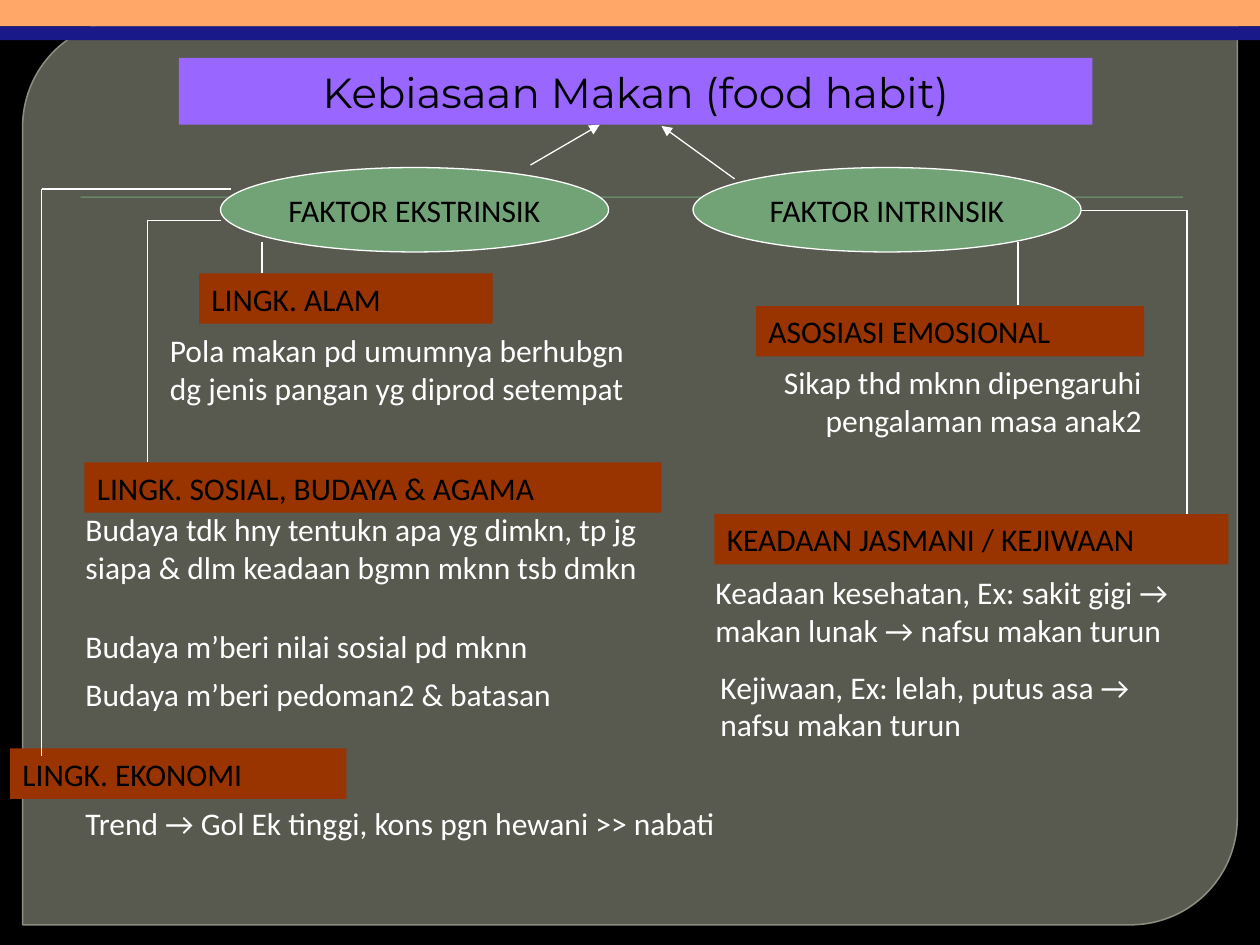
from lxml.etree import SubElement
from pptx import Presentation
from pptx.dml.color import RGBColor
from pptx.enum.shapes import MSO_CONNECTOR, MSO_SHAPE
from pptx.enum.text import MSO_ANCHOR, PP_ALIGN
from pptx.oxml.ns import qn
from pptx.util import Inches, Pt


def paint(color_format, color):
    color_format.solid()
    color_format.fore_color.rgb = RGBColor.from_string(color)


def write(shape, text, color="FFFFFF", size=18, font="Calibri",
          align=PP_ALIGN.LEFT, anchor=MSO_ANCHOR.TOP, wrap=True):
    frame = shape.text_frame
    frame.word_wrap = wrap
    frame.vertical_anchor = anchor
    paragraph = frame.paragraphs[0]
    paragraph.alignment = align
    run = paragraph.add_run()
    run.text = text
    run.font.size = Pt(size)
    run.font.name = font
    run.font.color.rgb = RGBColor.from_string(color)


presentation = Presentation()
presentation.slide_width = Inches(10)
presentation.slide_height = Inches(7.5)
slide = presentation.slides.add_slide(presentation.slide_layouts[5])
paint(slide.background.fill, "000000")

panel = slide.shapes.add_shape(MSO_SHAPE.ROUND_2_DIAG_RECTANGLE,
                               Inches(0.18), Inches(0.16), Inches(9.64), Inches(7.18))
panel.shadow.inherit = False
panel.adjustments[0] = 0.118
panel.adjustments[1] = 0
paint(panel.fill, "585A50")
paint(panel.line.fill, "8A8D7F")
panel.line.width = Pt(0.87)

bands = [
    (0.64, 1.56, 8.75, 0.01, "72A376"),
    (0, 0, 10, 0.21, "FFA669"),
    (0, 0.21, 10, 0.11, "191989"),
]
for left, top, width, height, color in bands:
    band = slide.shapes.add_shape(MSO_SHAPE.RECTANGLE, Inches(left), Inches(top),
                                  Inches(width), Inches(height))
    band.shadow.inherit = False
    paint(band.fill, color)
    band.line.fill.background()

title = slide.shapes.title
title.left, title.top = Inches(1.42), Inches(0.46)
title.width, title.height = Inches(7.25), Inches(0.53)
paint(title.fill, "9966FF")
write(title, "Kebiasaan Makan (food habit)", color="000000", size=24,
      font="Montserrat", align=PP_ALIGN.CENTER, anchor=MSO_ANCHOR.MIDDLE)
band.element.addnext(title.element)

for left, text in [(1.75, "FAKTOR EKSTRINSIK"), (5.5, "FAKTOR INTRINSIK")]:
    factor = slide.shapes.add_shape(MSO_SHAPE.OVAL, Inches(left), Inches(1.33),
                                    Inches(3.08), Inches(0.67))
    factor.shadow.inherit = False
    paint(factor.fill, "72A376")
    paint(factor.line.fill, "FFFFFF")
    factor.line.width = Pt(0.75)
    write(factor, text, color="000000", align=PP_ALIGN.CENTER,
          anchor=MSO_ANCHOR.MIDDLE, wrap=False)

headings = [
    (0.08, 5.94, 2.67, "LINGK. EKONOMI"),
    (0.67, 3.67, 4.58, "LINGK. SOSIAL, BUDAYA & AGAMA"),
    (1.58, 2.17, 2.33, "LINGK. ALAM"),
    (6, 2.43, 3.08, "ASOSIASI EMOSIONAL"),
    (5.67, 4.08, 4.08, "KEADAAN JASMANI / KEJIWAAN"),
]
for left, top, width, text in headings:
    heading = slide.shapes.add_shape(MSO_SHAPE.RECTANGLE, Inches(left), Inches(top),
                                     Inches(width), Inches(0.4))
    heading.shadow.inherit = False
    paint(heading.fill, "993300")
    heading.line.fill.background()
    write(heading, text, color="000000")

lines = [
    (4.21, 1.31, 4.76, 0.99, True),
    (5.83, 1.42, 5.25, 1, True),
    (2.08, 1.92, 2.08, 2.17, False),
    (1.17, 1.75, 1.17, 3.67, False),
    (1.17, 1.75, 1.75, 1.75, False),
    (0.33, 1.5, 0.33, 6, False),
    (0.33, 1.5, 1.83, 1.5, False),
    (8.08, 1.92, 8.08, 2.42, False),
    (8.58, 1.67, 9.42, 1.67, False),
    (9.42, 1.67, 9.42, 4.08, False),
]
for start_x, start_y, end_x, end_y, has_arrow in lines:
    connector = slide.shapes.add_connector(MSO_CONNECTOR.STRAIGHT, Inches(start_x),
                                           Inches(start_y), Inches(end_x), Inches(end_y))
    paint(connector.line.fill, "FFFFFF")
    connector.line.width = Pt(0.75)
    if has_arrow:
        SubElement(connector.line._get_or_add_ln(), qn("a:tailEnd"), type="triangle")
    SubElement(connector.element.spPr, qn("a:effectLst"))

notes = [
    (1.25, 2.58, 3.83, 1, PP_ALIGN.LEFT,
     "Pola makan pd umumnya berhubgn dg jenis pangan yg diprod setempat"),
    (0.58, 4, 4.58, 1, PP_ALIGN.LEFT,
     "Budaya tdk hny tentukn apa yg dimkn, tp jg siapa & dlm keadaan bgmn mknn tsb dmkn"),
    (0.58, 4.93, 4.58, 0.4, PP_ALIGN.LEFT, "Budaya m’beri nilai sosial pd mknn"),
    (0.58, 5.31, 4.58, 0.4, PP_ALIGN.LEFT, "Budaya m’beri pedoman2 & batasan"),
    (0.58, 6.33, 5.92, 0.4, PP_ALIGN.LEFT,
     "Trend → Gol Ek tinggi, kons pgn hewani >> nabati"),
    (5.33, 2.83, 3.83, 0.7, PP_ALIGN.RIGHT,
     "Sikap thd mknn dipengaruhi pengalaman masa anak2"),
    (5.58, 4.5, 4.42, 0.7, PP_ALIGN.LEFT,
     "Keadaan kesehatan, Ex: sakit gigi → makan lunak → nafsu makan turun"),
    (5.62, 5.25, 4, 0.7, PP_ALIGN.LEFT,
     "Kejiwaan, Ex: lelah, putus asa → nafsu makan turun"),
]
for left, top, width, height, align, text in notes:
    note = slide.shapes.add_textbox(Inches(left), Inches(top), Inches(width), Inches(height))
    write(note, text, align=align)

presentation.save("out.pptx")
